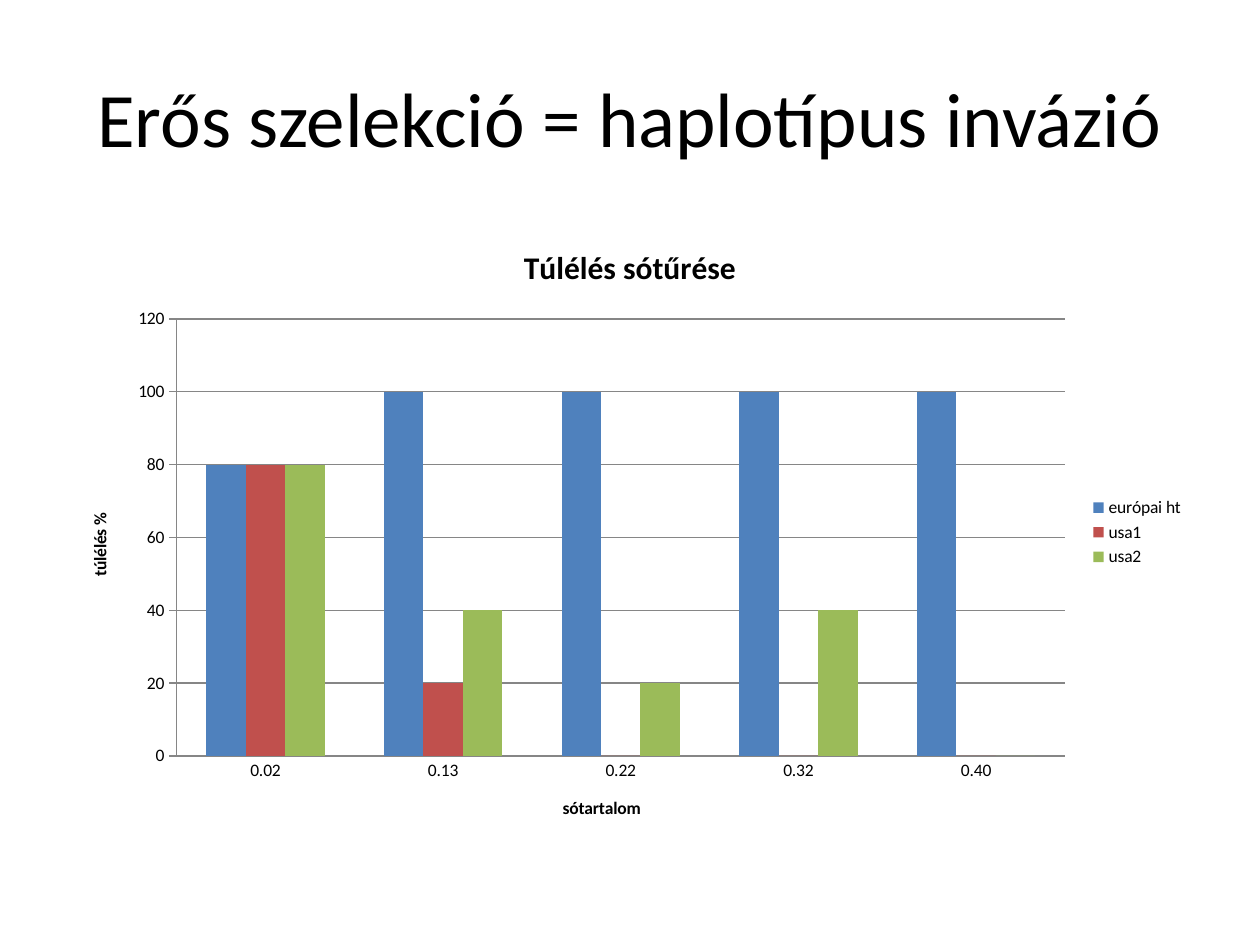
"""Build a slide with a clustered column chart of survival by salinity."""
import pptx
import pptx.chart.data
import pptx.dml.color
import pptx.enum.chart
import pptx.enum.text
import pptx.util

Inches, Pt = pptx.util.Inches, pptx.util.Pt
RGBColor = pptx.dml.color.RGBColor
BLACK = RGBColor(0x00, 0x00, 0x00)
GRAY = RGBColor(0x86, 0x86, 0x86)
BLUE = RGBColor(0x4F, 0x81, 0xBD)
RED = RGBColor(0xC0, 0x50, 0x4D)
GREEN = RGBColor(0x9B, 0xBB, 0x59)
FACE = "Calibri"


def write(frame, text, size=10, bold=False, color=BLACK):
    para = frame.paragraphs[0]
    para.alignment = pptx.enum.text.PP_ALIGN.CENTER
    run = para.add_run()
    run.text = text
    run.font.name = FACE
    run.font.size = Pt(size)
    run.font.bold = bold
    run.font.color.rgb = color


deck = pptx.Presentation()
deck.slide_width, deck.slide_height = Inches(10), Inches(7.5)
slide = deck.slides.add_slide(deck.slide_layouts[6])

box = slide.shapes.add_textbox(Inches(0.5), Inches(0.3), Inches(9), Inches(1.25))
box.text_frame.word_wrap = True
box.text_frame.vertical_anchor = pptx.enum.text.MSO_ANCHOR.MIDDLE
write(box.text_frame, "Erős szelekció = haplotípus invázió", size=44)

rows = [
    ("európai ht", (80, 100, 100, 100, 100), BLUE),
    ("usa1", (80, 20, 0, 0, 0), RED),
    ("usa2", (80, 40, 20, 40, 0), GREEN),
]
data = pptx.chart.data.CategoryChartData()
data.categories = ["0.02", "0.13", "0.22", "0.32", "0.40"]
for name, vals, color in rows:
    data.add_series(name, vals)

chart = slide.shapes.add_chart(
    pptx.enum.chart.XL_CHART_TYPE.COLUMN_CLUSTERED,
    Inches(0.5), Inches(1.75), Inches(9), Inches(4.95), data,
).chart
chart.font.name = FACE
chart.font.size = Pt(10)
chart.font.color.rgb = BLACK
chart.has_title = True
write(chart.chart_title.text_frame, "Túlélés sótűrése", size=18, bold=True)
chart.chart_title.include_in_layout = False
chart.has_legend = True
chart.legend.position = pptx.enum.chart.XL_LEGEND_POSITION.RIGHT
chart.legend.include_in_layout = False

plot = chart.plots[0]
plot.vary_by_categories = False
plot.gap_width = 150
plot.overlap = 0
for bars, (name, vals, color) in zip(plot.series, rows):
    bars.format.fill.solid()
    bars.format.fill.fore_color.rgb = color

ticks = pptx.enum.chart.XL_TICK_MARK
for axis, text, mark in (
    (chart.category_axis, "sótartalom", ticks.NONE),
    (chart.value_axis, "túlélés %", ticks.CROSS),
):
    write(axis.axis_title.text_frame, text, bold=True)
    axis.major_tick_mark = mark
    axis.minor_tick_mark = ticks.NONE
    axis.format.line.color.rgb = GRAY
    axis.format.line.width = Pt(0.75)

scale = chart.value_axis
scale.axis_title.text_frame._txBody.bodyPr.set("rot", "-5400000")
scale.minimum_scale, scale.maximum_scale, scale.major_unit = 0, 120, 20
scale.has_major_gridlines = True
scale.major_gridlines.format.line.color.rgb = GRAY
scale.major_gridlines.format.line.width = Pt(0.75)

deck.save("out.pptx")
